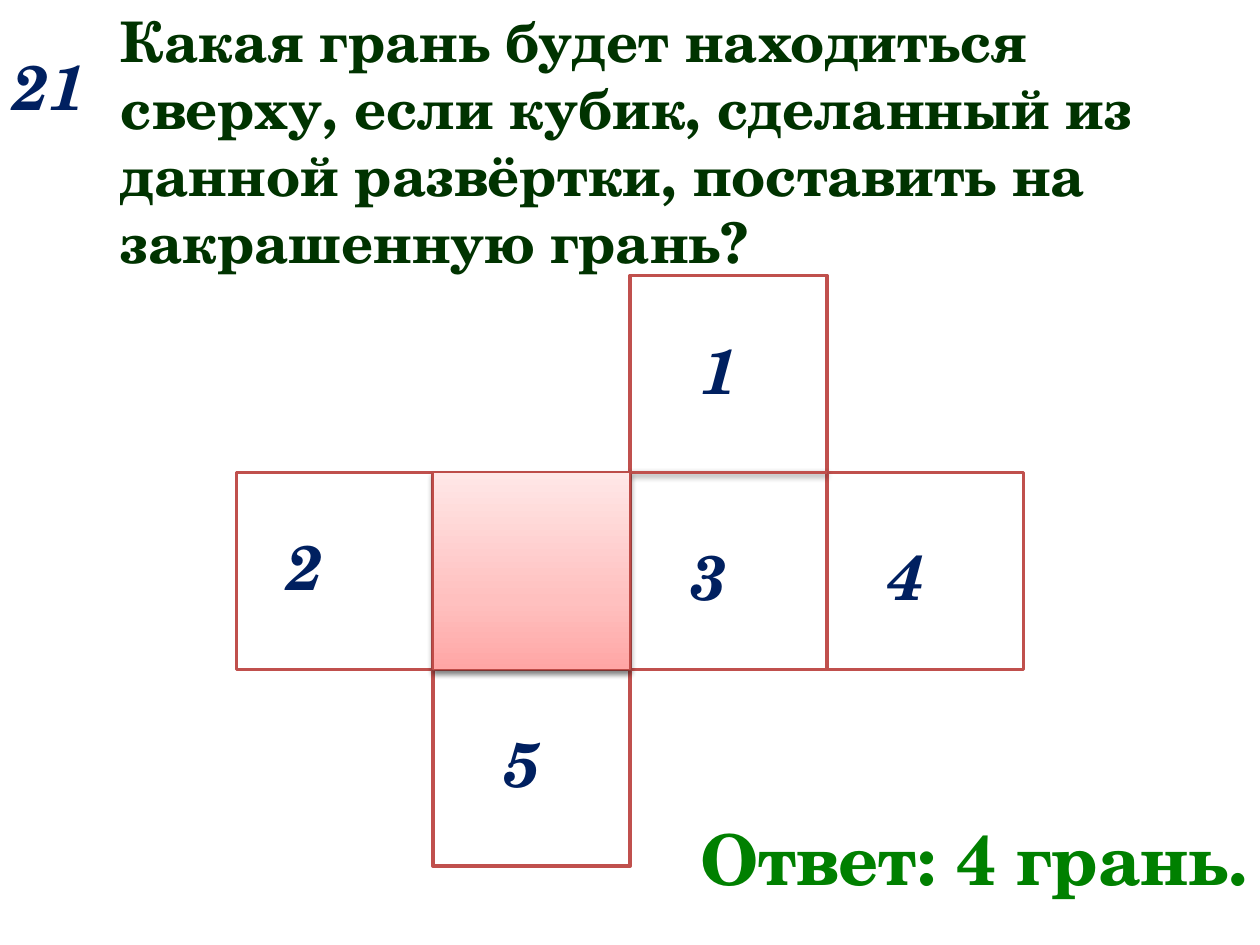
from dataclasses import dataclass

from lxml import etree
from pptx import Presentation
from pptx.dml.color import RGBColor
from pptx.enum.shapes import MSO_CONNECTOR, MSO_SHAPE
from pptx.enum.text import MSO_ANCHOR, MSO_AUTO_SIZE, PP_ALIGN
from pptx.oxml.ns import qn
from pptx.util import Inches, Pt

RECT = MSO_SHAPE.RECTANGLE
STRAIGHT = MSO_CONNECTOR.STRAIGHT
TOP = MSO_ANCHOR.TOP
FIT_SHAPE = MSO_AUTO_SIZE.SHAPE_TO_FIT_TEXT
LEFT, RIGHT = PP_ALIGN.LEFT, PP_ALIGN.RIGHT


@dataclass(frozen=True)
class Theme:
    font: str = "TeX Gyre Schola"
    question: str = "003300"
    number: str = "002060"
    answer: str = "008000"
    paper: str = "FFFFFF"
    edge: str = "C0504D"
    shaded_edge: str = "BF4C48"
    shaded: tuple = ((0, "FFA6A5"), (35, "FFC0BF"), (100, "FFE7E7"))
    question_size: int = 32
    number_size: int = 36
    answer_size: int = 40
    edge_width: float = 2
    shaded_width: float = 0.75


class NetSlide:
    CELL = 1.5625
    ORIGIN = (1.875, 2.1875)

    def __init__(self, prs, theme):
        self.theme = theme
        self.slide = prs.slides.add_slide(prs.slide_layouts[5])

    def at(self, col, row):
        x, y = self.ORIGIN
        return Inches(x + col * self.CELL), Inches(y + row * self.CELL)

    def span(self, cols, rows):
        return Inches(cols * self.CELL), Inches(rows * self.CELL)

    def add_text(self, sp, text, size, color, italic=False, align=LEFT):
        tf = sp.text_frame
        tf.word_wrap = True
        tf.auto_size = FIT_SHAPE
        tf.vertical_anchor = TOP
        p = tf.paragraphs[0]
        p.alignment = align
        r = p.add_run()
        r.text = text
        font = r.font
        font.name, font.size = self.theme.font, Pt(size)
        font.bold, font.italic = True, italic
        font.color.rgb = RGBColor.from_string(color)

    def title(self, text, x, y, w, h):
        sp = self.slide.shapes.title
        sp.left, sp.top, sp.width, sp.height = map(Inches, (x, y, w, h))
        self.add_text(sp, text, self.theme.question_size, self.theme.question)

    def answer(self, text, x, y, w, h):
        sp = self.slide.shapes.add_textbox(*map(Inches, (x, y, w, h)))
        self.add_text(sp, text, self.theme.answer_size, self.theme.answer, align=RIGHT)

    def number(self, text, left, top, width=0.7):
        sp = self.slide.shapes.add_textbox(left, top, Inches(width), Inches(0.71))
        self.add_text(sp, text, self.theme.number_size, self.theme.number, italic=True)

    def outline(self, sp, color, width):
        sp.line.color.rgb = RGBColor.from_string(color)
        sp.line.width = Pt(width)

    def strip(self, col, row, cols, rows):
        sp = self.slide.shapes.add_shape(RECT, *self.at(col, row), *self.span(cols, rows))
        sp.shadow.inherit = False
        sp.fill.solid()
        sp.fill.fore_color.rgb = RGBColor.from_string(self.theme.paper)
        self.outline(sp, self.theme.edge, self.theme.edge_width)
        return sp

    def drop_shadow(self, sp):
        props = sp._element.spPr
        effects = props.find(qn("a:effectLst"))
        if effects is None:
            effects = etree.SubElement(props, qn("a:effectLst"))
        shadow = etree.SubElement(effects, qn("a:outerShdw"), blurRad="40000",
                                  dist="20000", dir="5400000", rotWithShape="0")
        color = etree.SubElement(shadow, qn("a:srgbClr"), val="000000")
        etree.SubElement(color, qn("a:alpha"), val="38000")

    def fold(self, col, row):
        line = self.slide.shapes.add_connector(
            STRAIGHT, *self.at(col, row), *self.at(col + 1, row))
        self.outline(line, self.theme.edge, self.theme.edge_width)
        self.drop_shadow(line)

    def shaded_face(self, col, row):
        sp = self.strip(col, row, 1, 1)
        self.outline(sp, self.theme.shaded_edge, self.theme.shaded_width)
        sp.fill.gradient()
        grad = sp._element.spPr.find(qn("a:gradFill"))
        for child in list(grad):
            grad.remove(child)
        stops = etree.SubElement(grad, qn("a:gsLst"))
        for share, color in self.theme.shaded:
            stop = etree.SubElement(stops, qn("a:gs"), pos=str(share * 1000))
            etree.SubElement(stop, qn("a:srgbClr"), val=color)
        etree.SubElement(grad, qn("a:lin"), ang="16200000", scaled="0")
        self.drop_shadow(sp)


def main():
    prs = Presentation()
    prs.slide_width, prs.slide_height = Inches(10), Inches(7.5)
    s = NetSlide(prs, Theme())
    s.title("Какая грань будет находиться сверху, если кубик, сделанный из "
            "данной развёртки, поставить на закрашенную грань?", 0.86, 0, 8.86, 2.26)
    s.number("21", Inches(0.01), Inches(0.33), 0.87)
    s.answer("Ответ: 4 грань.", 4.67, 6.42, 5.33, 1.08)
    s.strip(0, 1, 4, 1)
    s.strip(1, 1, 1, 2)
    s.fold(1, 2)
    s.strip(2, 0, 1, 2)
    s.fold(2, 1)
    for text, col, row in (("1", 2.3, 0.25), ("4", 3.25, 1.3), ("3", 2.25, 1.3),
                           ("5", 1.3, 2.25), ("2", 0.2, 1.25)):
        s.number(text, *s.at(col, row))
    s.shaded_face(1, 1)
    prs.save("out.pptx")


if __name__ == "__main__":
    main()
